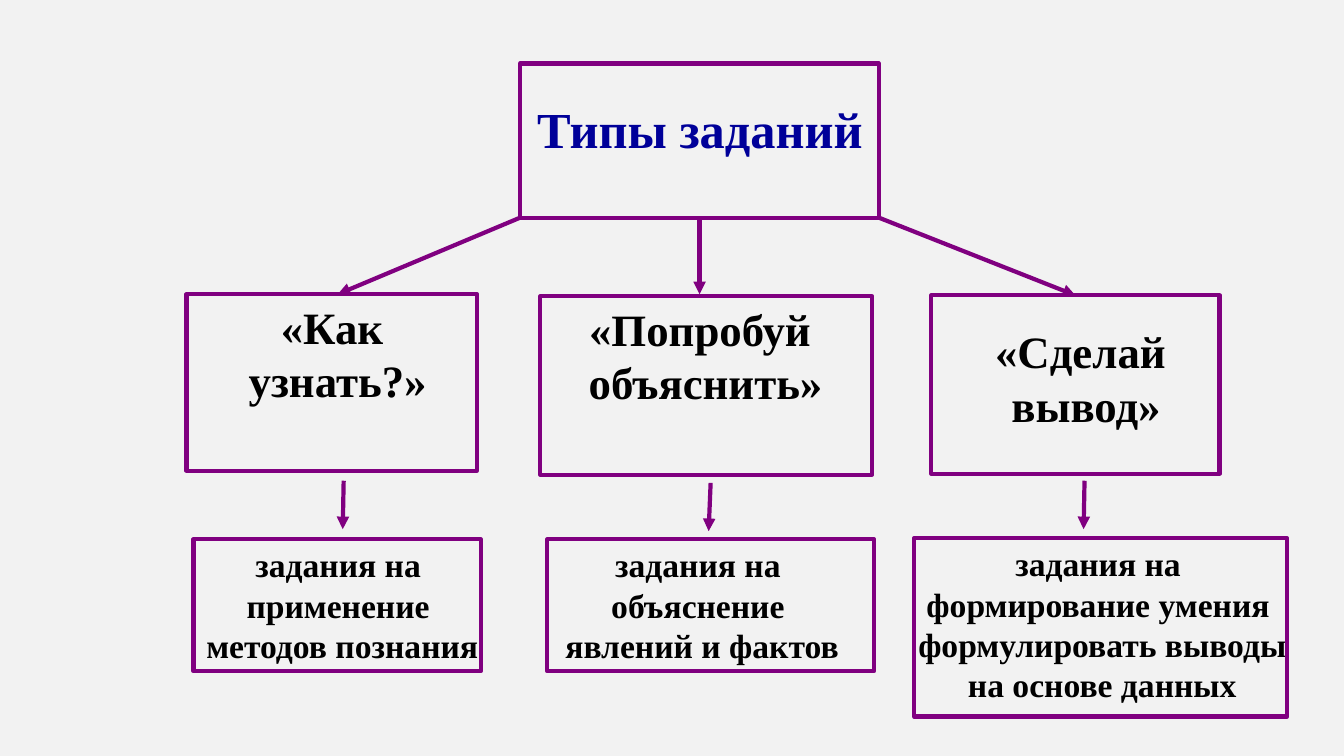
import pptx
import pptx.dml.color
import pptx.enum.dml
import pptx.enum.shapes
import pptx.enum.text
import pptx.oxml
import pptx.oxml.ns
import pptx.util

Pt = pptx.util.Pt
COLORS = {"background": "F2F2F2", "frame": "800080", "title": "000099", "text": "000000"}


def rgb(name):
    return pptx.dml.color.RGBColor.from_string(COLORS[name])


def write_text(sp, text, size, color="text", font="Times New Roman", spacing=1.0):
    tf = sp.text_frame
    tf.word_wrap = False
    tf.auto_size = pptx.enum.text.MSO_AUTO_SIZE.SHAPE_TO_FIT_TEXT
    tf.vertical_anchor = pptx.enum.text.MSO_ANCHOR.TOP
    for i, line in enumerate(text.split("\n")):
        p = tf.paragraphs[0] if i == 0 else tf.add_paragraph()
        p.alignment = pptx.enum.text.PP_ALIGN.CENTER
        p.line_spacing = spacing
        p.space_before = Pt(0)
        r = p.add_run()
        r.text = line
        r.font.name = font
        r.font.size = Pt(size)
        r.font.bold = True
        r.font.color.rgb = rgb(color)


class Diagram:
    def __init__(self, prs, line_width=3):
        self.line_width = line_width
        self.s = prs.slides.add_slide(prs.slide_layouts[5])
        self.s.background.fill.solid()
        self.s.background.fill.fore_color.rgb = rgb("background")

    def style_line(self, sp):
        sp.line.color.rgb = rgb("frame")
        sp.line.width = Pt(self.line_width)

    def title(self, text, left, top, width, height):
        sp = self.s.shapes.title
        sp.left, sp.top, sp.width, sp.height = map(Pt, (left, top, width, height))
        write_text(sp, text, 36, color="title")

    def label(self, text, size, left, top, width, height):
        sp = self.s.shapes.add_textbox(*map(Pt, (left, top, width, height)))
        write_text(sp, text, size)

    def frame(self, left, top, width, height):
        rect = pptx.enum.shapes.MSO_SHAPE.RECTANGLE
        sp = self.s.shapes.add_shape(rect, *map(Pt, (left, top, width, height)))
        sp.shadow.inherit = False
        sp.fill.background()
        self.style_line(sp)

    def arrow(self, x1, y1, x2, y2):
        straight = pptx.enum.shapes.MSO_CONNECTOR.STRAIGHT
        sp = self.s.shapes.add_connector(straight, *map(Pt, (x1, y1, x2, y2)))
        self.style_line(sp)
        tail = pptx.oxml.parse_xml(
            f'<a:tailEnd {pptx.oxml.ns.nsdecls("a")} type="triangle"/>')
        sp.line._get_or_add_ln().append(tail)
        effects = pptx.oxml.parse_xml(f'<a:effectLst {pptx.oxml.ns.nsdecls("a")}/>')
        sp._element.spPr.append(effects)


TYPES = [
    ("«Как \nузнать?»", (169.9, 210.2, 142.6, 85), (133.2, 210.2, 207.4, 126)),
    ("«Попробуй \nобъяснить»", (412.6, 211.7, 182.9, 85), (385.9, 211.7, 236.9, 127.4)),
    ("«Сделай \nвывод»", (702.7, 227.5, 146.2, 85), (665.3, 211, 205.9, 127.4)),
]
TASKS = [
    ("задания на \nприменение \nметодов познания",
     (139, 385.2, 211, 94.3), (138.2, 385.2, 205.2, 94.3)),
    ("задания на \nобъяснение \nявлений и фактов",
     (395.3, 385.2, 212.4, 94.3), (391, 385.2, 233.3, 94.3)),
    ("задания на \nформирование умения \nформулировать выводы\nна основе данных",
     (647.3, 384.5, 280.1, 123.8), (653, 384.5, 266.4, 127.4)),
]
ARROWS = [
    (371.5, 155.5, 241.2, 210.2),
    (627.8, 155.5, 768.2, 211),
    (499.7, 155.5, 499.7, 210.2),
    (245.5, 343.4, 244.8, 378),
    (507.6, 344.9, 506.2, 379.4),
    (774.7, 343.4, 774, 378),
]


def main():
    prs = pptx.Presentation()
    prs.slide_width, prs.slide_height = Pt(960), Pt(540)
    diagram = Diagram(prs)
    diagram.title("Типы заданий", 375.1, 66.2, 249.8, 51.1)
    diagram.frame(371.5, 45.4, 256.3, 110.2)
    for size, boxes in ((32, TYPES), (24, TASKS)):
        for text, label, frame in boxes:
            diagram.label(text, size, *label)
            diagram.frame(*frame)
    for ends in ARROWS:
        diagram.arrow(*ends)
    prs.save("out.pptx")


if __name__ == "__main__":
    main()
